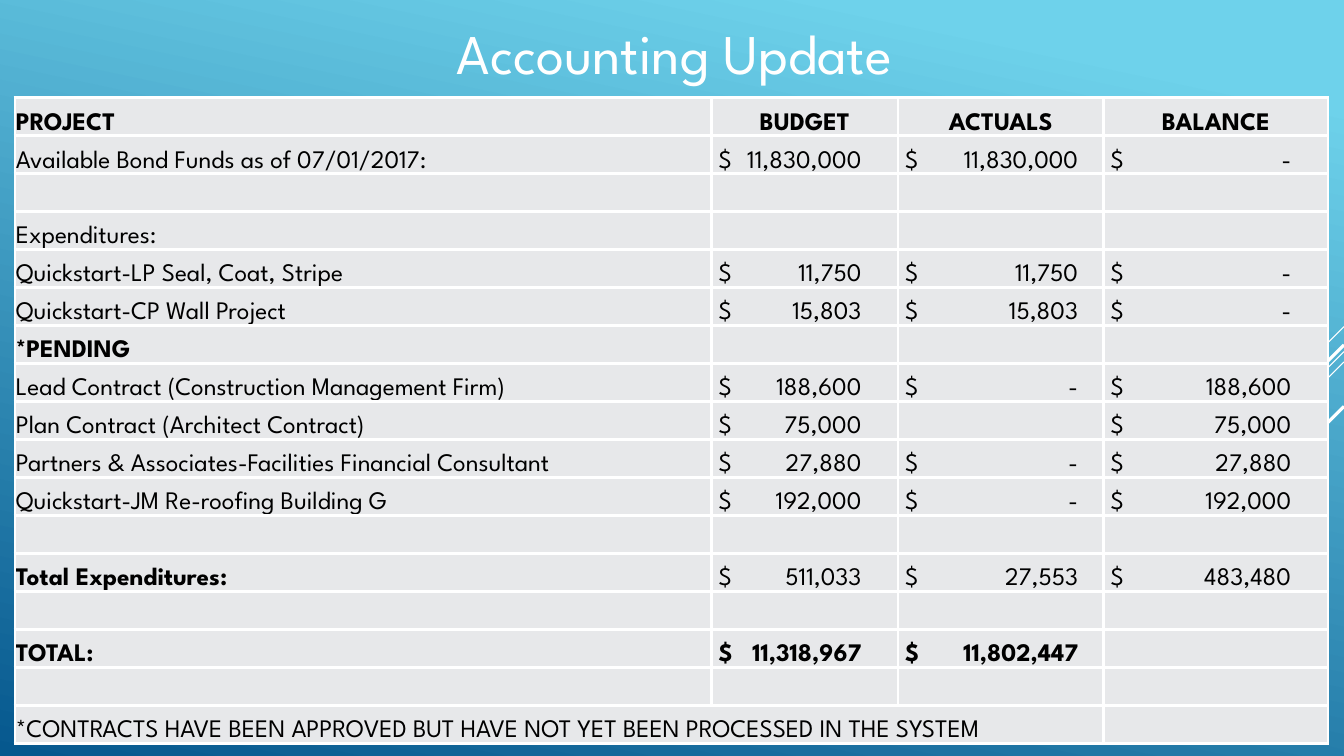
from lxml.etree import SubElement
from pptx import Presentation
from pptx.dml.color import RGBColor
from pptx.enum.shapes import MSO_CONNECTOR
from pptx.enum.text import MSO_ANCHOR, PP_ALIGN
from pptx.oxml.ns import qn
from pptx.util import Cm, Pt

FONT = "League Spartan"
COLORS = {"sky": "6ED2EB", "deep": "06588E", "white": "FFFFFF",
          "cell": "E7E8EA", "black": "000000"}
COLUMN_WIDTHS = (17.55, 4.7, 5.18, 5.66)
AMOUNT_TABS = (None, 3.6, 4.36, 4.55)  # right edge of the amounts in each column
BOLD_LABELS = ("*PENDING", "Total Expenditures:", "TOTAL:")
ROWS = [
    ("PROJECT", "BUDGET", "ACTUALS", "BALANCE"),
    ("Available Bond Funds as of 07/01/2017:", "11,830,000", "11,830,000", "-"),
    ("", "", "", ""),
    ("Expenditures:", "", "", ""),
    ("Quickstart-LP Seal, Coat, Stripe", "11,750", "11,750", "-"),
    ("Quickstart-CP Wall Project", "15,803", "15,803", "-"),
    ("*PENDING", "", "", ""),
    ("Lead Contract (Construction Management Firm)", "188,600", "-", "188,600"),
    ("Plan Contract (Architect Contract)", "75,000", "", "75,000"),
    ("Partners & Associates-Facilities Financial Consultant", "27,880", "-", "27,880"),
    ("Quickstart-JM Re-roofing Building G", "192,000", "-", "192,000"),
    ("", "", "", ""),
    ("Total Expenditures:", "511,033", "27,553", "483,480"),
    ("", "", "", ""),
    ("TOTAL:", "11,318,967", "11,802,447", ""),
    ("", "", "", ""),
    ("*CONTRACTS HAVE BEEN APPROVED BUT HAVE NOT YET BEEN PROCESSED IN THE SYSTEM",
     "", "", ""),
]
# Diagonals falling to the left from the right edge: top, drop, line width
DIAGONALS = [(8.23, 2.54, 0.75), (8.86, 8.28, 0.75), (9.12, 5.27, 0.75),
             (8.69, 4.85, 2.25), (10.24, 3.53, 2.25)]


def rgb(name):
    return RGBColor.from_string(COLORS[name])


def add_run(p, text, size, color, bold=False):
    r = p.add_run()
    r.text = text
    r.font.name = FONT
    r.font.size = Pt(size)
    r.font.bold = bold
    r.font.color.rgb = rgb(color)


def set_background(s):
    fill = s.background.fill
    fill.gradient()
    fill.gradient_angle = 258
    for stop, color, position in zip(fill.gradient_stops, ("sky", "deep"), (0.1, 1)):
        stop.color.rgb = rgb(color)
        stop.position = position


def add_diagonal(s, right, top, drop, width):
    line = s.shapes.add_connector(MSO_CONNECTOR.STRAIGHT, right, Cm(top),
                                  right - Cm(drop), Cm(top + drop))
    line.line.color.rgb = rgb("white")
    line.line.width = Pt(width)
    SubElement(line._element.spPr, qn("a:effectLst"))


def add_title(s, text):
    tf = s.shapes.add_textbox(Cm(1.35), Cm(0.33), Cm(31.29), Cm(1.96)).text_frame
    tf.word_wrap = True
    p = tf.paragraphs[0]
    p.alignment = PP_ALIGN.CENTER
    add_run(p, text, 40, "white")


def style_cell(cell, left_margin):
    """Set white borders, grey fill, bottom anchor and tight margins."""
    tcPr = cell._tc.get_or_add_tcPr()
    for side in ("L", "R", "T", "B"):
        ln = SubElement(tcPr, qn(f"a:ln{side}"), w=str(Pt(2.25)))
        fill = SubElement(ln, qn("a:solidFill"))
        SubElement(fill, qn("a:srgbClr"), val=COLORS["white"])
    cell.fill.solid()
    cell.fill.fore_color.rgb = rgb("cell")
    cell.vertical_anchor = MSO_ANCHOR.BOTTOM
    cell.margin_left = Cm(left_margin)
    cell.margin_right = cell.margin_top = Cm(0.02)
    cell.margin_bottom = 0


def add_right_tab(p, position):
    tabs = SubElement(p._p.get_or_add_pPr(), qn("a:tabLst"))
    SubElement(tabs, qn("a:tab"), pos=str(Cm(position)), algn="r")


def add_accounts_table(s):
    table = s.shapes.add_table(len(ROWS), len(COLUMN_WIDTHS), Cm(0.38), Cm(2.46),
                               Cm(33.09), Cm(16.28)).table
    table.first_row = table.horz_banding = False
    for column, width in zip(table.columns, COLUMN_WIDTHS):
        column.width = Cm(width)
    for i, row in enumerate(ROWS):
        header = i == 0
        for j, text in enumerate(row):
            cell = table.cell(i, j)
            amount = j > 0 and not header
            style_cell(cell, 0.18 if amount else 0.02)
            if not text:
                continue
            p = cell.text_frame.paragraphs[0]
            if amount:
                add_right_tab(p, AMOUNT_TABS[j])
                text = f"$\t{text}"
            elif header and j > 0:
                p.alignment = PP_ALIGN.CENTER
            bold = header or row[0] == "TOTAL:" or text in BOLD_LABELS
            add_run(p, text, 18, "black", bold)
    last = len(ROWS) - 1
    table.cell(last, 0).merge(table.cell(last, 2))


def main():
    prs = Presentation()
    prs.slide_width, prs.slide_height = Cm(33.87), Cm(19.05)
    s = prs.slides.add_slide(prs.slide_layouts[6])
    set_background(s)
    for top, drop, width in DIAGONALS:
        add_diagonal(s, prs.slide_width, top, drop, width)
    add_title(s, "Accounting Update")
    add_accounts_table(s)
    prs.save("out.pptx")


if __name__ == "__main__":
    main()
